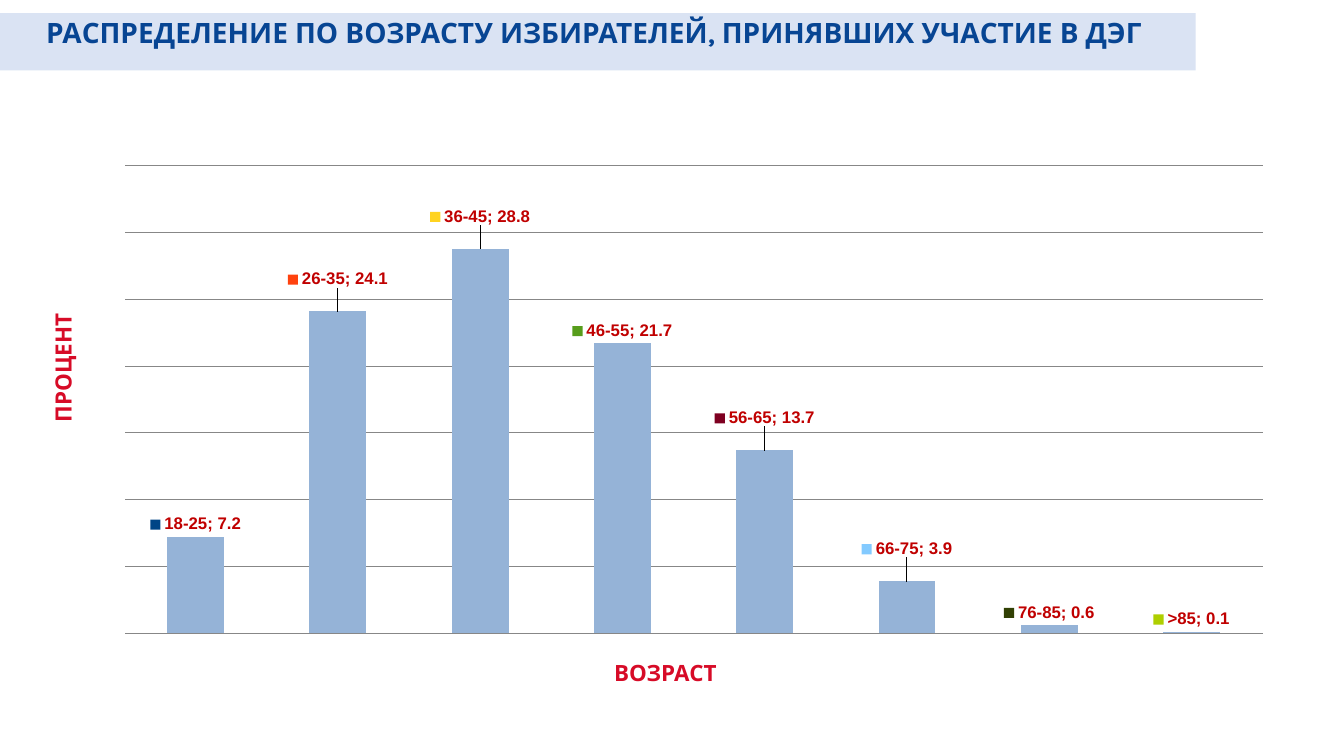
from copy import deepcopy

from pptx import Presentation
from pptx import util as u
from pptx.chart.data import CategoryChartData
from pptx.dml.color import RGBColor
from pptx.enum import chart as charts, shapes, text
from pptx.oxml import parse_xml
from pptx.oxml.ns import nsdecls, qn

BAND = RGBColor(0xDA, 0xE3, 0xF3)
NAVY = RGBColor(0x07, 0x45, 0x93)
CRIMSON = RGBColor(0xD7, 0x0B, 0x27)
LABEL_RED = RGBColor(0xC0, 0x00, 0x00)
BAR_BLUE = RGBColor(0x95, 0xB3, 0xD7)
GRID_GREY = RGBColor(0x87, 0x87, 0x87)
BLACK = RGBColor(0, 0, 0)

SHARES = {"18-25": 7.2, "26-35": 24.1, "36-45": 28.8, "46-55": 21.7,
          "56-65": 13.7, "66-75": 3.9, "76-85": 0.6, ">85": 0.1}
RAISED_LABELS = (1, 2, 4, 5)

TITLE_FONT = {"name": "Karla", "size": u.Pt(20), "bold": True}
AXIS_FONT = {"name": "Cabin", "size": u.Pt(16), "bold": True}
LABEL_FONT = {"size": u.Pt(12), "bold": True}
CHART_FONT = {"name": "Arial", "size": u.Pt(10)}


def set_all(target, values):
    for name, value in values.items():
        setattr(target, name, value)


def style_font(font, values, color):
    set_all(font, values)
    font.color.rgb = color


def add_text(page, box, words, font, color, para_format=None, frame_format=None):
    frame = page.shapes.add_textbox(*map(u.Inches, box)).text_frame
    set_all(frame, {"word_wrap": True,
                    "auto_size": text.MSO_AUTO_SIZE.SHAPE_TO_FIT_TEXT,
                    **(frame_format or {})})
    para = frame.paragraphs[0]
    set_all(para, para_format or {})
    span = para.add_run()
    span.text = words
    style_font(span.font, font, color)
    return frame


def add_heading(page, box):
    left, top, width, height = box
    band = page.shapes.add_shape(shapes.MSO_SHAPE.RECTANGLE, *map(u.Inches, box))
    band.shadow.inherit = False
    band.fill.solid()
    band.fill.fore_color.rgb = BAND
    band.line.fill.background()
    add_text(page, (left + 0.36, top - 0.03, width + 0.54, 0.43),
             "РАСПРЕДЕЛЕНИЕ ПО ВОЗРАСТУ ИЗБИРАТЕЛЕЙ, ПРИНЯВШИХ УЧАСТИЕ В ДЭГ",
             TITLE_FONT, NAVY)


def add_axis_title(page, box, words, vertical=False):
    side, edge = u.Inches(0.13), u.Inches(0.07)
    frame = add_text(
        page, box, words, AXIS_FONT, CRIMSON,
        {"alignment": text.PP_ALIGN.CENTER, "line_spacing": u.Pt(18.7)},
        {"vertical_anchor": text.MSO_ANCHOR.MIDDLE,
         "margin_left": side, "margin_right": side,
         "margin_top": edge, "margin_bottom": edge})
    if vertical:
        frame._txBody.bodyPr.set("vert", "vert270")


def label_bars(series):
    labels = series.data_labels
    set_all(labels, {"show_legend_key": True, "show_value": True,
                     "show_category_name": True, "show_percentage": True,
                     "number_format": "0.0", "number_format_is_linked": False,
                     "position": charts.XL_LABEL_POSITION.OUTSIDE_END})
    style_font(labels.font, LABEL_FONT, LABEL_RED)

    # Separator between age group and share
    root = labels._element
    for leader in root.findall(qn("c:showLeaderLines")):
        root.remove(leader)
    root.append(parse_xml(f'<c:separator {nsdecls("c")}>; </c:separator>'))

    # Some labels stand a little higher above their bars
    shared = list(root)
    for place, index in enumerate(RAISED_LABELS):
        raised = parse_xml(
            f'<c:dLbl {nsdecls("c")}><c:idx val="{index}"/><c:layout>'
            '<c:manualLayout><c:x val="0"/><c:y val="-0.04"/>'
            '</c:manualLayout></c:layout></c:dLbl>')
        raised.extend(deepcopy(part) for part in shared)
        root.insert(place, raised)


def fix_plot_area(chart):
    area = chart._chartSpace.chart.plotArea
    for layout in area.findall(qn("c:layout")):
        area.remove(layout)
    sizes = "".join(f'<c:{name} val="{value}"/>' for name, value in
                    {"x": 0.02, "y": 0.02, "w": 0.96, "h": 0.96}.items())
    area.insert(0, parse_xml(
        f'<c:layout {nsdecls("c")}><c:manualLayout>'
        '<c:layoutTarget val="inner"/><c:xMode val="edge"/><c:yMode val="edge"/>'
        f'{sizes}</c:manualLayout></c:layout>'))


def add_age_chart(page, box):
    data = CategoryChartData(number_format="0.0")
    data.categories = list(SHARES)
    data.add_series("Series 1", list(SHARES.values()))
    chart = page.shapes.add_chart(charts.XL_CHART_TYPE.COLUMN_CLUSTERED,
                                  *map(u.Inches, box), data).chart
    set_all(chart, {"has_legend": False, "has_title": False})
    style_font(chart.font, CHART_FONT, BLACK)

    # Axes
    chart.category_axis.visible = False
    set_all(chart.value_axis, {"visible": False, "minimum_scale": 0,
                               "maximum_scale": 35, "major_unit": 5,
                               "has_major_gridlines": True})
    grid = chart.value_axis.major_gridlines.format.line
    grid.color.rgb = GRID_GREY
    grid.width = u.Pt(0.75)

    # Bars; varying by category colours the label keys
    plot = chart.plots[0]
    set_all(plot, {"gap_width": 150, "vary_by_categories": True})
    series = plot.series[0]
    series.format.fill.solid()
    series.format.fill.fore_color.rgb = BAR_BLUE
    label_bars(series)
    fix_plot_area(chart)


def main():
    deck = Presentation()
    deck.slide_width, deck.slide_height = u.Inches(13.33), u.Inches(7.5)
    page = deck.slides.add_slide(deck.slide_layouts[6])
    add_heading(page, (0, 0.13, 11.86, 0.57))
    add_axis_title(page, (0.36, 3.02, 0.53, 1.26), "ПРОЦЕНТ", vertical=True)
    add_age_chart(page, (1, 1.55, 11.76, 4.83))
    add_axis_title(page, (5.72, 6.48, 1.81, 0.4), "ВОЗРАСТ ")
    deck.save("out.pptx")


if __name__ == "__main__":
    main()
